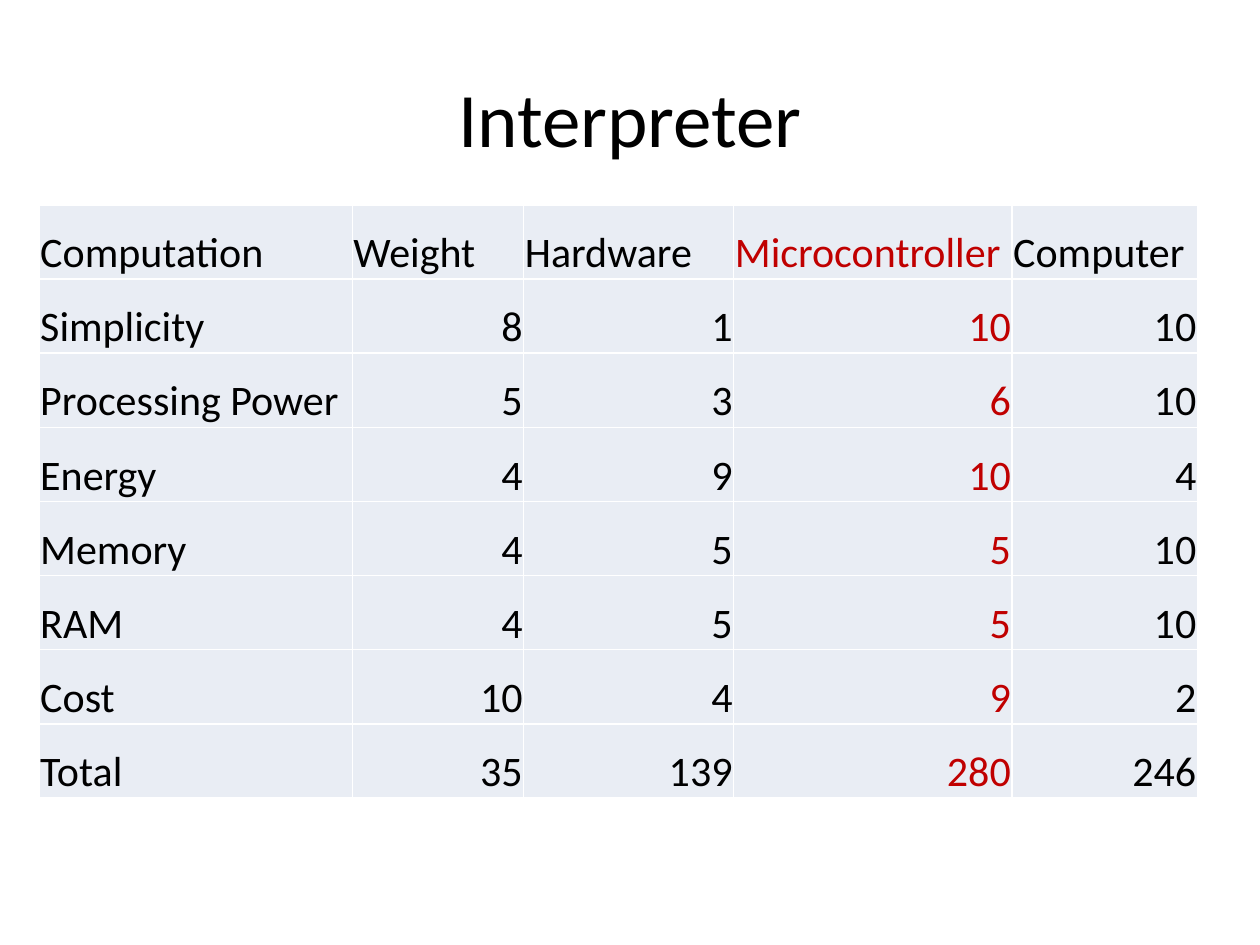
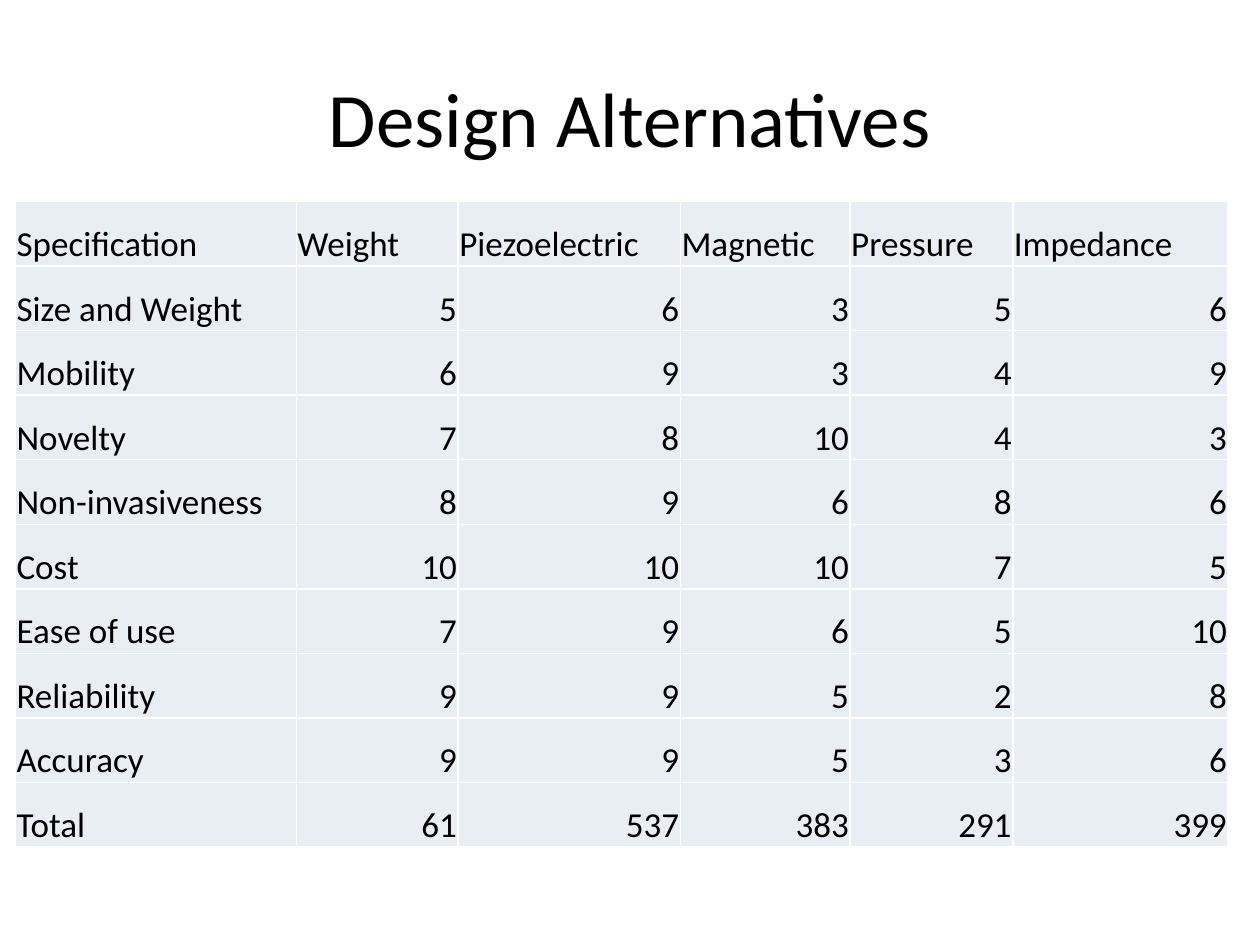
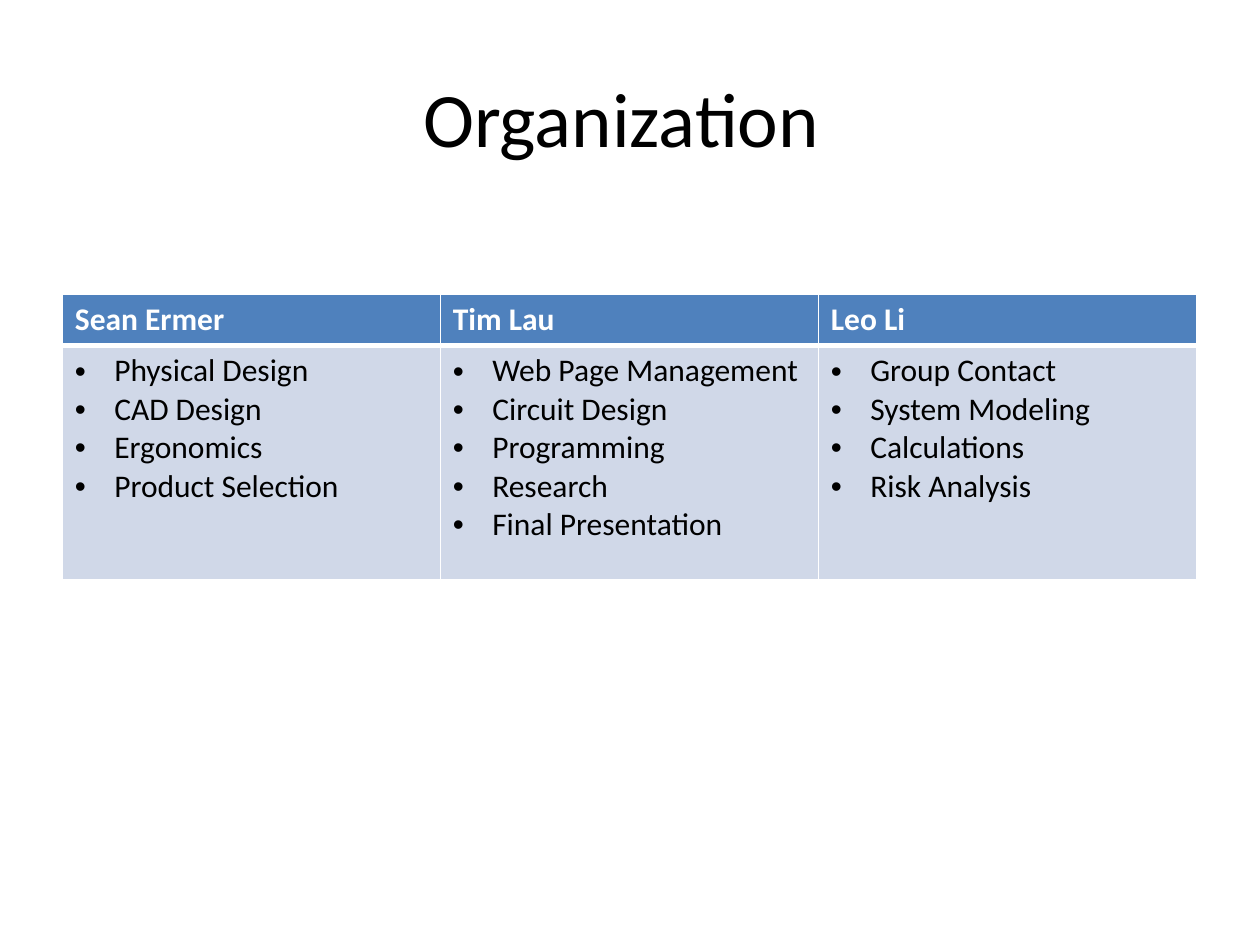
"""Build three slides with decision matrices and a table of team duties."""
from dataclasses import dataclass

from lxml import etree
from pptx import Presentation
from pptx.dml.color import RGBColor
from pptx.enum.text import MSO_ANCHOR, PP_ALIGN
from pptx.oxml.ns import qn
from pptx.presentation import Presentation as Deck
from pptx.slide import Slide
from pptx.table import Table, _Cell
from pptx.text.text import TextFrame, _Paragraph
from pptx.util import Pt

MIDDLE, BOTTOM = MSO_ANCHOR.MIDDLE, MSO_ANCHOR.BOTTOM
LEFT, CENTER, RIGHT = PP_ALIGN.LEFT, PP_ALIGN.CENTER, PP_ALIGN.RIGHT

FONT = "Calibri"
BLACK, WHITE, RED = "000000", "FFFFFF", "C00000"
PALE, HEADING_BLUE, DUTY_BLUE = "E9EDF4", "4F81BD", "D0D8E8"
THIN, THICK = 1, 3
BULLET_INDENT = 22.5
SCORE_MARGIN = 0.7


@dataclass(frozen=True)
class Grid:
    """Place and measures of a table, in points."""

    left: float
    top: float
    columns: tuple[float, ...]
    rows: tuple[float, ...]


@dataclass(frozen=True)
class Matrix:
    """A slide with weighted scores, headings first."""

    title: str
    grid: Grid
    size: float
    scores: tuple[tuple[str | int, ...], ...]
    chosen: int | None = None


@dataclass(frozen=True)
class Member:
    """A team member and the duties taken on."""

    name: str
    duties: tuple[str, ...]


MATRICES = (
    Matrix(
        "Interpreter",
        Grid(22.3, 117, (179, 98, 120, 159, 106), (42.4,) * 8),
        24,
        (
            ("Computation", "Weight", "Hardware", "Microcontroller", "Computer"),
            ("Simplicity", 8, 1, 10, 10),
            ("Processing Power", 5, 3, 6, 10),
            ("Energy", 4, 9, 10, 4),
            ("Memory", 4, 5, 5, 10),
            ("RAM", 4, 5, 5, 10),
            ("Cost", 10, 4, 9, 2),
            ("Total", 35, 139, 280, 246),
        ),
        chosen=3,
    ),
    Matrix(
        "Design Alternatives",
        Grid(8.8, 115.2, (160.5, 92.5, 127, 97, 93, 123), (36.9,) * 10),
        20,
        (
            ("Specification", "Weight", "Piezoelectric", "Magnetic", "Pressure", "Impedance"),
            ("Size and Weight", 5, 6, 3, 5, 6),
            ("Mobility", 6, 9, 3, 4, 9),
            ("Novelty", 7, 8, 10, 4, 3),
            ("Non-invasiveness", 8, 9, 6, 8, 6),
            ("Cost", 10, 10, 10, 7, 5),
            ("Ease of use", 7, 9, 6, 5, 10),
            ("Reliability", 9, 9, 5, 2, 8),
            ("Accuracy", 9, 9, 5, 3, 6),
            ("Total", 61, 537, 383, 291, 399),
        ),
    ),
)

TEAM_GRID = Grid(35.6, 168, (216,) * 3, (29.5, 134))
TEAM = (
    Member("Sean Ermer", ("Physical Design", "CAD Design", "Ergonomics", "Product Selection")),
    Member("Tim Lau", ("Web Page Management", "Circuit Design", "Programming", "Research",
                       "Final Presentation")),
    Member("Leo Li", ("Group Contact", "System Modeling", "Calculations", "Risk Analysis")),
)


def rgb(color: str) -> RGBColor:
    """Turn a hex string into a colour."""
    return RGBColor.from_string(color)


def write(frame: TextFrame, text: str, size: float, color: str = BLACK,
          align: PP_ALIGN = LEFT, bold: bool = False) -> None:
    """Fill a frame with text in one style."""
    frame.text = text
    for paragraph in frame.paragraphs:
        paragraph.alignment = align
        for run in paragraph.runs:
            run.font.name = FONT
            run.font.size = Pt(size)
            run.font.bold = bold
            run.font.color.rgb = rgb(color)


def add_bullet(paragraph: _Paragraph) -> None:
    """Give a paragraph a hanging bullet."""
    properties = paragraph._p.get_or_add_pPr()
    properties.set("marL", str(Pt(BULLET_INDENT)))
    properties.set("indent", str(-Pt(BULLET_INDENT)))
    etree.SubElement(properties, qn("a:buFont"), typeface="Arial")
    etree.SubElement(properties, qn("a:buChar"), char="•")


def paint_cell(cell: _Cell, fill: str, top: float = THIN, bottom: float = THIN) -> None:
    """Draw a cell's white borders and its fill."""
    properties = cell._tc.get_or_add_tcPr()
    for side, width in (("L", THIN), ("R", THIN), ("T", top), ("B", bottom)):
        border = etree.SubElement(properties, qn(f"a:ln{side}"), w=str(Pt(width)))
        solid = etree.SubElement(border, qn("a:solidFill"))
        etree.SubElement(solid, qn("a:srgbClr"), val=WHITE)
    cell.fill.solid()
    cell.fill.fore_color.rgb = rgb(fill)


def add_titled_slide(deck: Deck, title: str) -> Slide:
    """Add a blank slide with a centred title."""
    slide = deck.slides.add_slide(deck.slide_layouts[6])
    frame = slide.shapes.add_textbox(Pt(36), Pt(21.6), Pt(648), Pt(90)).text_frame
    frame.word_wrap = True
    frame.vertical_anchor = MIDDLE
    write(frame, title, 44, align=CENTER)
    return slide


def add_grid(slide: Slide, grid: Grid) -> Table:
    """Add an empty table with the grid's measures."""
    table = slide.shapes.add_table(
        len(grid.rows), len(grid.columns), Pt(grid.left), Pt(grid.top),
        Pt(sum(grid.columns)), Pt(sum(grid.rows))).table
    table.first_row = False
    table.horz_banding = False
    for column, width in zip(table.columns, grid.columns):
        column.width = Pt(width)
    for row, height in zip(table.rows, grid.rows):
        row.height = Pt(height)
    return table


def add_matrix(deck: Deck, matrix: Matrix) -> None:
    """Add a slide with a decision matrix."""
    table = add_grid(add_titled_slide(deck, matrix.title), matrix.grid)
    for row, scores in enumerate(matrix.scores):
        for column, score in enumerate(scores):
            cell = table.cell(row, column)
            paint_cell(cell, PALE)
            cell.vertical_anchor = BOTTOM
            cell.margin_left = cell.margin_right = cell.margin_top = Pt(SCORE_MARGIN)
            cell.margin_bottom = Pt(0)
            write(cell.text_frame, str(score), matrix.size,
                  RED if column == matrix.chosen else BLACK,
                  RIGHT if isinstance(score, int) else LEFT)


def add_team(deck: Deck) -> None:
    """Add a slide with each member's duties."""
    table = add_grid(add_titled_slide(deck, "Organization "), TEAM_GRID)
    for column, member in enumerate(TEAM):
        heading, duties = table.cell(0, column), table.cell(1, column)
        paint_cell(heading, HEADING_BLUE, bottom=THICK)
        write(heading.text_frame, member.name, 18, WHITE, bold=True)
        paint_cell(duties, DUTY_BLUE, top=THICK)
        write(duties.text_frame, "\n".join(member.duties), 18)
        for paragraph in duties.text_frame.paragraphs:
            add_bullet(paragraph)


def main() -> None:
    """Build and save the presentation."""
    deck = Presentation()
    deck.slide_width, deck.slide_height = Pt(720), Pt(540)
    for matrix in MATRICES:
        add_matrix(deck, matrix)
    add_team(deck)
    deck.save("out.pptx")


if __name__ == "__main__":
    main()
